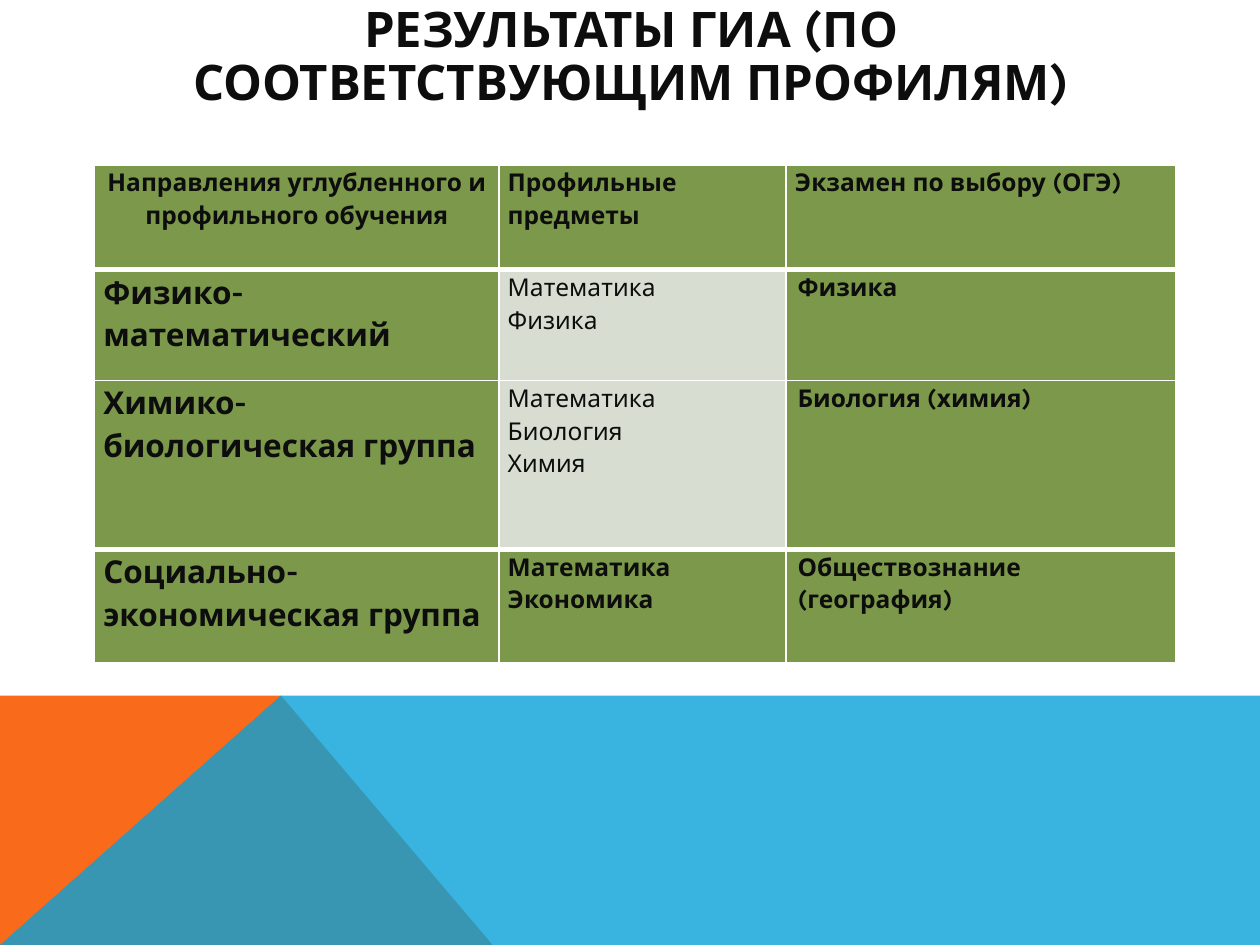
from lxml import etree
from pptx import Presentation
from pptx.dml.color import RGBColor
from pptx.enum.text import MSO_ANCHOR, PP_ALIGN
from pptx.oxml.ns import qn
from pptx.util import Inches, Pt

COLORS = {"text": "0D0D0D", "green": "7C984A", "pale": "D7DDD0",
          "border": "FFFFFF", "orange": "F96A1B", "blue": "08A1D9"}
FONT = "Karla"


def style(p, size, bold, align=PP_ALIGN.LEFT, spacing=1.15):
    p.alignment = align
    p.line_spacing = spacing
    p.font.name = FONT
    p.font.size = Pt(size)
    p.font.bold = bold
    p.font.color.rgb = RGBColor.from_string(COLORS["text"])


def set_borders(cell, widths):
    """Draw the cell edges; widths maps L, R, T, B to points."""
    tcPr = cell._tc.get_or_add_tcPr()
    for side, width in widths.items():
        ln = etree.SubElement(tcPr, qn(f"a:ln{side}"), w=str(Pt(width)))
        fill = etree.SubElement(ln, qn("a:solidFill"))
        etree.SubElement(fill, qn("a:srgbClr"), val=COLORS["border"])


prs = Presentation()
prs.slide_width, prs.slide_height = Inches(10), Inches(7.5)
s = prs.slides.add_slide(prs.slide_layouts[6])

# Bottom band: an orange corner under a translucent blue area
bands = [
    ("orange", None, [(0, 7.5), (0, 5.52), (2.23, 5.52), (3.91, 7.5)]),
    ("blue", 80, [(0, 7.5), (2.23, 5.52), (10, 5.52), (10, 7.5)]),
]
for color, opacity, points in bands:
    start, *rest = [(Inches(x), Inches(y)) for x, y in points]
    builder = s.shapes.build_freeform(*start)
    builder.add_line_segments(rest, close=True)
    sp = builder.convert_to_shape()
    sp.shadow.inherit = False
    sp.line.fill.background()
    sp.fill.solid()
    sp.fill.fore_color.rgb = RGBColor.from_string(COLORS[color])
    if opacity:
        clr = sp._element.spPr.find(qn("a:solidFill")).find(qn("a:srgbClr"))
        etree.SubElement(clr, qn("a:alpha"), val=str(opacity * 1000))

# Title
tf = s.shapes.add_textbox(Inches(0.9), Inches(0.4), Inches(8.22), Inches(0.6)).text_frame
tf.word_wrap = True
tf.vertical_anchor = MSO_ANCHOR.MIDDLE
tf.margin_bottom = Inches(0.53)
tf.text = "РЕЗУЛЬТАТЫ ГИА (ПО СООТВЕТСТВУЮЩИМ ПРОФИЛЯМ)"
style(tf.paragraphs[0], 28, True, PP_ALIGN.CENTER, 0.9)

# Table
rows = [
    ["Направления углубленного и профильного обучения", "Профильные предметы",
     "Экзамен по выбору (ОГЭ)"],
    ["Физико-математический", "Математика\nФизика", "Физика"],
    ["Химико-биологическая группа", "Математика\nБиология\nХимия", "Биология (химия)"],
    ["Социально-экономическая группа", "Математика\nЭкономика",
     "Обществознание (география)"],
]
col_widths = [3.21, 2.28, 3.09]
row_heights = [0.83, 0.88, 1.34, 0.9]
last = len(rows) - 1

table = s.shapes.add_table(len(rows), len(col_widths), Inches(0.75), Inches(1.31),
                           Inches(sum(col_widths)), Inches(sum(row_heights))).table
table.first_row = table.horz_banding = False
for col, width in zip(table.columns, col_widths):
    col.width = Inches(width)
for row, height in zip(table.rows, row_heights):
    row.height = Inches(height)

for i, texts in enumerate(rows):
    for j, text in enumerate(texts):
        cell = table.cell(i, j)
        plain = j == 1 and 0 < i < last
        # Thick rules follow the header and precede the last row
        set_borders(cell, {"L": 1, "R": 1, "T": 3 if i in (1, last) else 1,
                           "B": 3 if i in (0, last - 1) else 1})
        cell.fill.solid()
        cell.fill.fore_color.rgb = RGBColor.from_string(COLORS["pale" if plain else "green"])
        cell.margin_left = Inches(0.09 if i and j == 2 else 0.07)
        cell.margin_right = Inches(0.07)
        cell.margin_top = cell.margin_bottom = 0
        cell.text = text
        for p in cell.text_frame.paragraphs:
            style(p, 18 if i and j == 0 else 14, not plain,
                  PP_ALIGN.CENTER if i == j == 0 else PP_ALIGN.LEFT)

prs.save("out.pptx")
